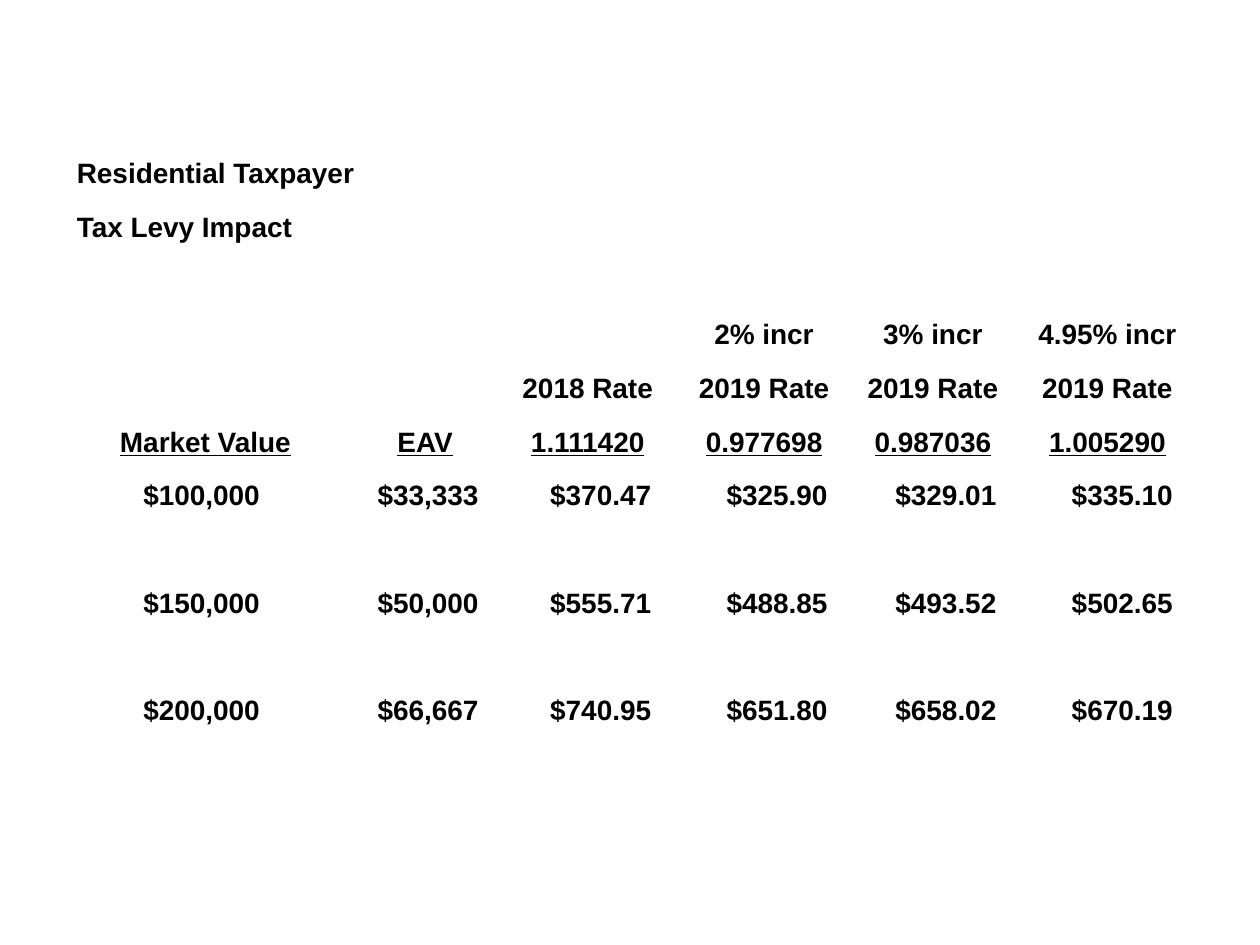
from dataclasses import dataclass

import pptx
import pptx.dml.color
import pptx.enum.text
import pptx.util

Inches = pptx.util.Inches
Align = pptx.enum.text.PP_ALIGN


@dataclass(frozen=True)
class Theme:
    font: str = "Arial"
    size: int = 16
    ink: str = "000000"


@dataclass(frozen=True)
class Line:
    """One table row; its texts fill every second column from start."""
    row: int
    texts: tuple[str, ...]
    start: int = 0
    first: Align = Align.CENTER
    rest: Align = Align.CENTER
    under: bool = False


THEME = Theme()
LEFT, TOP, HIGH = 0.6, 1.08, 4.69
WIDTHS = (2.06, 0.22, 0.99, 0.22, 1.15, 0.25, 1.15, 0.19, 1.15, 0.22, 1.18)
ROWS = 11

TITLES = ("Residential Taxpayer", "Tax Levy Impact")
HEADS = (
    Line(3, ("2% incr", "3% incr", "4.95% incr"), start=6),
    Line(4, ("2018 Rate", "2019 Rate", "2019 Rate", "2019 Rate"), start=4),
    Line(5, ("Market Value", "EAV", "1.111420", "0.977698", "0.987036",
             "1.005290"), under=True),
)
TAXES = (
    ("$100,000 ", "$33,333 ", "$370.47 ", "$325.90 ", "$329.01 ", "$335.10 "),
    ("$150,000 ", "$50,000 ", "$555.71 ", "$488.85 ", "$493.52 ", "$502.65 "),
    ("$200,000 ", "$66,667 ", "$740.95 ", "$651.80 ", "$658.02 ", "$670.19 "),
)


def add_grid(slide):
    """Add the plain table, without banding or fills."""
    frame = slide.shapes.add_table(
        ROWS, len(WIDTHS), Inches(LEFT), Inches(TOP),
        Inches(sum(WIDTHS)), Inches(HIGH))
    grid = frame.table
    grid.first_row = grid.horz_banding = False
    for col, width in zip(grid.columns, WIDTHS):
        col.width = Inches(width)
    for row in grid.rows:
        row.height = Inches(HIGH / ROWS)
    for cell in grid.iter_cells():
        cell.fill.background()
        cell.margin_left = cell.margin_right = cell.margin_top = Inches(0.01)
        cell.margin_bottom = 0
        cell.vertical_anchor = pptx.enum.text.MSO_ANCHOR.BOTTOM
    grid.cell(0, 0).merge(grid.cell(0, 1))
    return grid


def write(cell, text: str, align: Align, under: bool) -> None:
    cell.text = text
    para = cell.text_frame.paragraphs[0]
    para.alignment = align
    font = para.font
    font.name = THEME.font
    font.size = pptx.util.Pt(THEME.size)
    font.bold = True
    font.underline = under
    font.color.rgb = pptx.dml.color.RGBColor.from_string(THEME.ink)


def fill_line(grid, line: Line) -> None:
    for i, text in enumerate(line.texts):
        align = line.rest if i else line.first
        write(grid.cell(line.row, line.start + 2 * i), text, align, line.under)


def main() -> None:
    deck = pptx.Presentation()
    deck.slide_width, deck.slide_height = Inches(10), Inches(7.5)
    slide = deck.slides.add_slide(deck.slide_layouts[6])
    grid = add_grid(slide)
    titles = [Line(i, (text,), first=Align.LEFT)
              for i, text in enumerate(TITLES)]
    taxes = [Line(6 + 2 * i, texts, rest=Align.RIGHT)
             for i, texts in enumerate(TAXES)]
    for line in (*titles, *HEADS, *taxes):
        fill_line(grid, line)
    deck.save("out.pptx")


if __name__ == "__main__":
    main()
